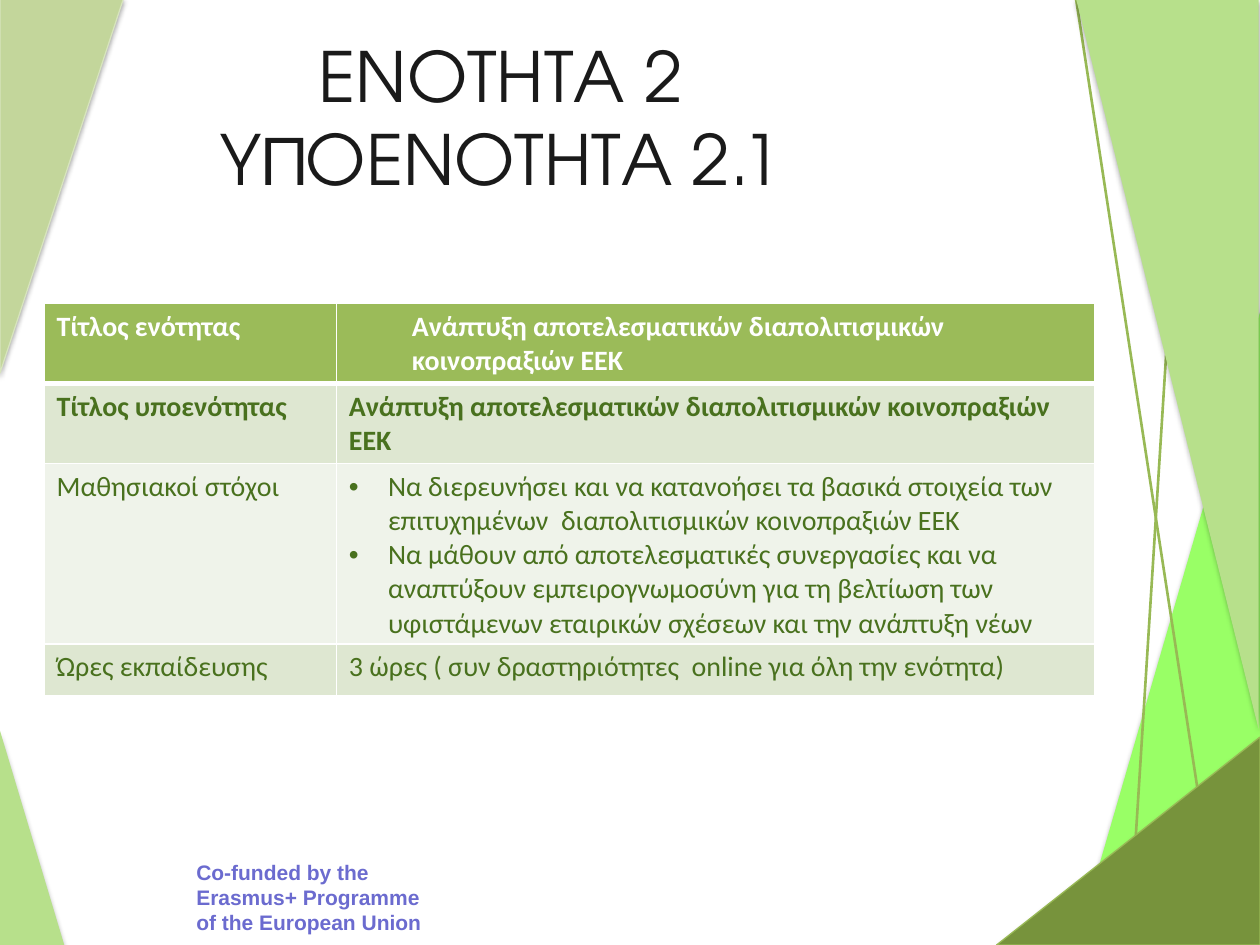
"""Build the unit overview slide: green triangles, title, syllabus table and funding note."""
from dataclasses import dataclass
from lxml import etree
from pptx import Presentation
from pptx import util as u
from pptx.dml.color import RGBColor
from pptx.enum import shapes, text
from pptx.oxml import ns


@dataclass(frozen=True)
class Theme:
    white: str = "FFFFFF"
    ink: str = "1A1A1A"
    note: str = "6B6BCF"
    body: str = "49711E"
    head: str = "9BBB59"
    band: str = "DEE7D1"
    pale: str = "EFF3EA"
    neon: str = "99FF66"
    leaf: str = "B7E08B"
    sage: str = "C3D69B"
    mist: str = "D7E4BD"
    moss: str = "77933C"
    edge: str = "98B955"
    big: float = 39.6
    mid: float = 16
    small: float = 12


def add(up, tag, **attrs):
    node = etree.SubElement(up, ns.qn(tag))
    for key, val in attrs.items():
        node.set(key, str(val))
    return node


def style(para, face, size, tint, bold=False):
    for run in para.runs:
        run.font.name = face
        run.font.size = u.Pt(size)
        run.font.bold = bold
        run.font.color.rgb = RGBColor.from_string(tint)


theme = Theme()
deck = Presentation()
deck.slide_width, deck.slide_height = u.Inches(10), u.Inches(7.5)
slide = deck.slides.add_slide(deck.slide_layouts[6])

wedges = [
    ((8.54, 2.41, 1.48, 5.09), "h", theme.neon, None, 38, 1.6),
    ((0, 5.8, 0.51, 1.7), "", theme.leaf, None, 35, 1.8),
    ((0, -0.01, 0.98, 2.97), "v", theme.sage, theme.mist, 35, 1.8),
    ((8.54, -0.01, 1.45, 5.8), "hv", theme.leaf, None, 35, 1.8),
    ((7.91, 5.85, 2.09, 1.65), "h", theme.moss, theme.edge, 35, 1.8),
]
rays = [(8.96, 7.5, 9.3, 2.1), (9.65, 7.21, 8.54, -0.01)]

for step, (box, flips, fill, edge, alpha, dist) in enumerate(wedges):
    if step == 3:
        for ray in rays:
            line = slide.shapes.add_connector(
                shapes.MSO_CONNECTOR.STRAIGHT, *map(u.Inches, ray))
            line.line.color.rgb = RGBColor.from_string(theme.edge)
            line.line.width = u.Pt(1.5)
            add(line._element.spPr, "a:effectLst")
    wedge = slide.shapes.add_shape(
        shapes.MSO_SHAPE.RIGHT_TRIANGLE, *map(u.Inches, box))
    wedge.fill.solid()
    wedge.fill.fore_color.rgb = RGBColor.from_string(fill)
    if edge:
        wedge.line.color.rgb = RGBColor.from_string(edge)
        wedge.line.width = u.Pt(0.75)
    else:
        wedge.line.fill.background()
    wedge.shadow.inherit = False
    props = wedge._element.spPr
    for flip in flips:
        props.find(ns.qn("a:xfrm")).set("flip" + flip.upper(), "1")
    glow = add(props.find(ns.qn("a:effectLst")), "a:outerShdw", blurRad=u.Pt(3.1),
               dist=u.Pt(dist), dir=90 * 60000, algn="ctr", rotWithShape=0)
    add(add(glow, "a:srgbClr", val="000000"), "a:alpha", val=alpha * 1000)

labels = [
    ((1.46, 6.77, 2, 0.71), "Co-funded by the Erasmus+ Programme of the European Union",
     "Arial", theme.small, theme.note, True, text.PP_ALIGN.LEFT, text.MSO_ANCHOR.TOP),
    ((0.74, 0.3, 6.47, 1.25), "ΕΝΟΤΗΤΑ 2\vΥΠΟΕΝΟΤΗΤΑ 2.1",
     "TeX Gyre Adventor", theme.big, theme.ink, False,
     text.PP_ALIGN.CENTER, text.MSO_ANCHOR.MIDDLE),
]
for box, words, face, size, tint, bold, align, anchor in labels:
    frame = slide.shapes.add_textbox(*map(u.Inches, box)).text_frame
    frame.word_wrap = True
    frame.vertical_anchor = anchor
    frame.text = words
    frame.paragraphs[0].alignment = align
    style(frame.paragraphs[0], face, size, tint, bold)

topic = "Ανάπτυξη αποτελεσματικών διαπολιτισμικών κοινοπραξιών ΕΕΚ"
goals = [
    "Να διερευνήσει και να κατανοήσει τα βασικά στοιχεία των επιτυχημένων  "
    "διαπολιτισμικών κοινοπραξιών ΕΕΚ",
    "Να μάθουν από αποτελεσματικές συνεργασίες και να αναπτύξουν εμπειρογνωμοσύνη "
    "για τη βελτίωση των υφιστάμενων εταιρικών σχέσεων και την ανάπτυξη νέων",
]
rows = [
    ("Τίτλος ενότητας", topic, theme.head, theme.white, True),
    ("Τίτλος υποενότητας", topic, theme.band, theme.body, True),
    ("Μαθησιακοί στόχοι", "\n".join(goals), theme.pale, theme.body, False),
    ("Ώρες εκπαίδευσης", "3 ώρες ( συν δραστηριότητες  online για όλη την ενότητα)",
     theme.band, theme.body, False),
]
grid = slide.shapes.add_table(
    len(rows), 2, *map(u.Inches, (0.35, 2.41, 8.34, 1.86))).table
for col, width in zip(grid.columns, (2.32, 6.02)):
    col.width = u.Inches(width)
for row, high in zip(grid.rows, (0.63, 0.41, 0.41, 0.41)):
    row.height = u.Inches(high)

for r, (*words, fill, tint, bold) in enumerate(rows):
    for c, word in enumerate(words):
        cell = grid.cell(r, c)
        cell.text = word
        props = cell._tc.get_or_add_tcPr()
        for side in "LRTB":
            thick = 3 if (r, side) in ((0, "B"), (1, "T")) else 1
            rule = add(props, "a:ln" + side, w=u.Pt(thick))
            add(add(rule, "a:solidFill"), "a:srgbClr", val=theme.white)
        cell.fill.solid()
        cell.fill.fore_color.rgb = RGBColor.from_string(fill)
        for para in cell.text_frame.paragraphs:
            form = para._p.get_or_add_pPr()
            if (r, c) == (0, 1):
                form.set("marL", str(u.Inches(0.5)))
            if (r, c) == (2, 1):
                form.set("marL", str(u.Inches(0.31)))
                form.set("indent", str(u.Inches(-0.31)))
                add(form, "a:buFont", typeface="Arial")
                add(form, "a:buChar", char="•")
            style(para, "Calibri", theme.mid, tint, bold)

deck.save("out.pptx")
